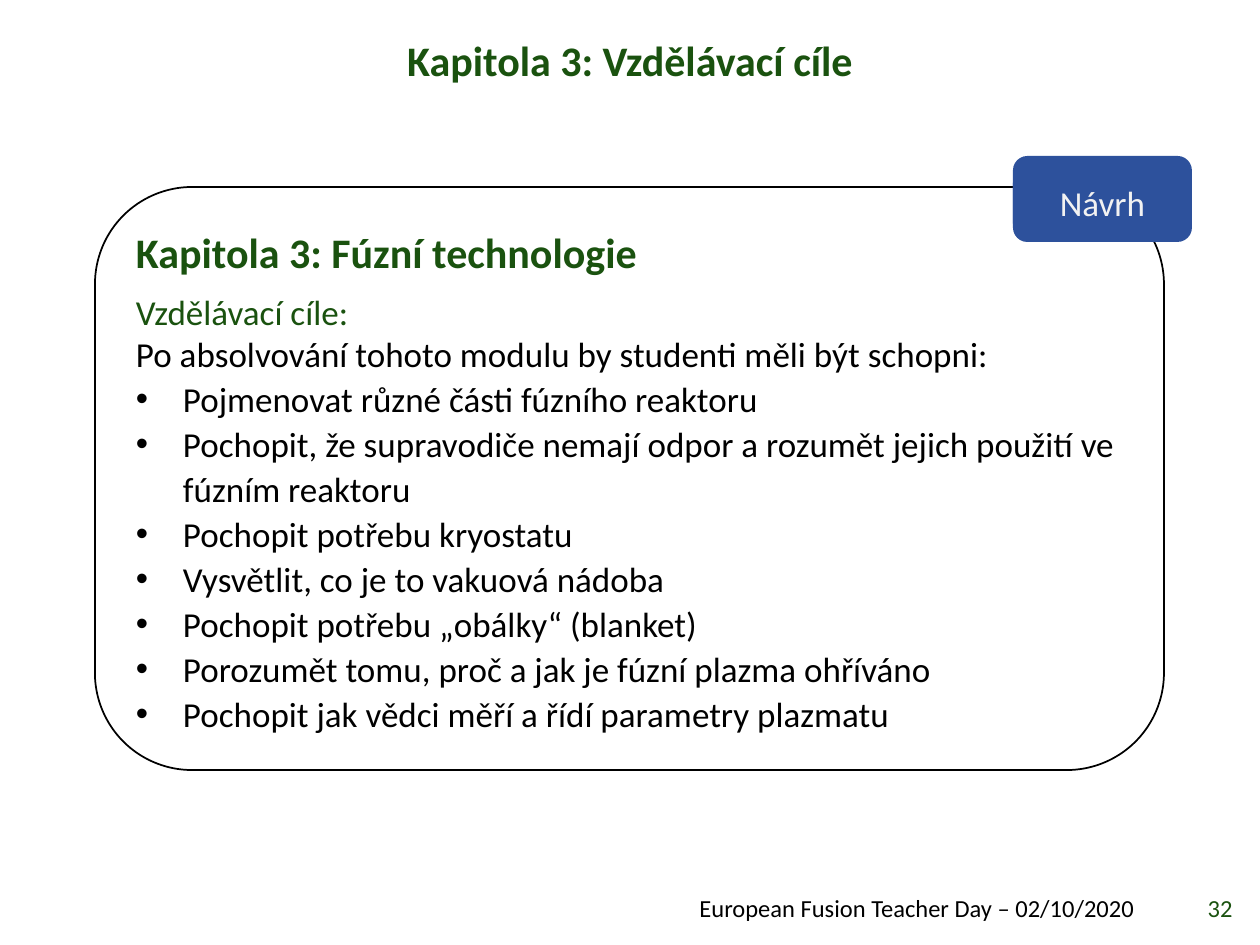
from lxml.etree import SubElement
from pptx import Presentation
from pptx.dml.color import RGBColor
from pptx.enum.shapes import MSO_SHAPE
from pptx.enum.text import MSO_ANCHOR as Anchor, MSO_AUTO_SIZE as AutoSize, PP_ALIGN as Align
from pptx.oxml.ns import qn
from pptx.util import Emu, Pt

PX_PER_INCH = 126
FONT = "Calibri"
GREEN = RGBColor(0x1A, 0x52, 0x0F)
BLUE = RGBColor(0x2D, 0x51, 0x9C)
BLACK = RGBColor(0, 0, 0)
WHITE = RGBColor(0xFF, 0xFF, 0xFF)
LIGHT = RGBColor(0xF2, 0xF2, 0xF2)

HEADING = {"size": Pt(24), "color": GREEN, "bold": True}
SUBHEADING = {"size": Pt(20), "color": GREEN}
BODY = {"size": Pt(20), "color": BLACK}
BADGE = {"size": Pt(20), "color": LIGHT}
FOOTER = {"size": Pt(14), "color": BLACK}
PAGE_NUMBER = {"size": Pt(14), "color": GREEN}

GOALS = [
    "Pojmenovat různé části fúzního reaktoru",
    "Pochopit, že supravodiče nemají odpor a rozumět jejich použití ve fúzním reaktoru",
    "Pochopit potřebu kryostatu",
    "Vysvětlit, co je to vakuová nádoba",
    "Pochopit potřebu „obálky“ (blanket)",
    "Porozumět tomu, proč a jak je fúzní plazma ohříváno",
    "Pochopit jak vědci měří a řídí parametry plazmatu",
]


def px(length):
    return Emu(round(length * 914400 / PX_PER_INCH))


def set_values(target, values):
    for name, value in values.items():
        setattr(target, name, value)


def place(shape, left, top, width, height):
    box = {"left": left, "top": top, "width": width, "height": height}
    set_values(shape, {name: px(length) for name, length in box.items()})


def set_frame(shape, anchor):
    set_values(shape.text_frame, {
        "word_wrap": True, "auto_size": AutoSize.NONE, "vertical_anchor": anchor,
    })


def write(paragraph, text, style, **spacing):
    set_values(paragraph, spacing)
    run = paragraph.add_run()
    run.text = text
    values = {"name": FONT, "bold": False, **style}
    run.font.color.rgb = values.pop("color")
    set_values(run.font, values)


def set_bullet(paragraph, indent=0):
    """Give the paragraph a hanging bullet, or none when the indent is zero."""
    properties = paragraph._p.get_or_add_pPr()
    properties.set("marL", str(px(indent)))
    properties.set("indent", str(-px(indent)))
    if not indent:
        SubElement(properties, qn("a:buNone"))
        return
    SubElement(properties, qn("a:buFont"), typeface="Arial")
    SubElement(properties, qn("a:buChar"), char="•")
    tabs = SubElement(properties, qn("a:tabLst"))
    SubElement(tabs, qn("a:tab"), pos=str(px(63)), algn="l")


def add_title(slide, text):
    title = slide.shapes.title
    place(title, 0, 33, 1260, 59)
    set_frame(title, Anchor.MIDDLE)
    write(title.text_frame.paragraphs[0], text, HEADING,
          alignment=Align.CENTER, line_spacing=0.9)


def add_goal_card(slide):
    """Shape the body placeholder as a rounded card and fill in the goals."""
    card = slide.placeholders[1]
    place(card, 95, 187, 1069, 583)
    geometry = SubElement(card._element.spPr, qn("a:prstGeom"), prst="roundRect")
    SubElement(geometry, qn("a:avLst"))
    card.fill.solid()
    card.fill.fore_color.rgb = WHITE
    card.line.color.rgb = BLACK
    card.line.width = Pt(1)
    set_frame(card, Anchor.MIDDLE)

    rows = [
        ("Kapitola 3: Fúzní technologie", HEADING, 0, 1.07, 8),
        ("Vzdělávací cíle:", SUBHEADING, 0, 1.0, 0),
        ("Po absolvování tohoto modulu by studenti měli být schopni:", BODY, 0, 1.0, 0),
    ]
    rows += [(goal, BODY, 47, 1.07, 8 if goal == GOALS[-1] else 0) for goal in GOALS]
    frame = card.text_frame
    for index, (text, style, indent, line_spacing, after) in enumerate(rows):
        paragraph = frame.add_paragraph() if index else frame.paragraphs[0]
        set_bullet(paragraph, indent)
        write(paragraph, text, style, alignment=Align.LEFT, line_spacing=line_spacing,
              space_before=Pt(0), space_after=Pt(after))


def add_badge_shape(slide, top, height):
    shape = slide.shapes.add_shape(
        MSO_SHAPE.ROUNDED_RECTANGLE, px(1013), px(top), px(179), px(height))
    shape.shadow.inherit = False
    shape.fill.solid()
    shape.fill.fore_color.rgb = BLUE
    shape.line.fill.background()
    return shape


def add_badge(slide, text):
    add_badge_shape(slide, 156, 86)
    label = add_badge_shape(slide, 173, 60)
    set_frame(label, Anchor.MIDDLE)
    write(label.text_frame.paragraphs[0], text, BADGE, alignment=Align.CENTER)


def add_footer_text(slide, text, left, width, style):
    box = slide.shapes.add_textbox(px(left), px(886), px(width), px(43))
    set_frame(box, Anchor.MIDDLE)
    write(box.text_frame.paragraphs[0], text, style, alignment=Align.RIGHT)


def main():
    presentation = Presentation()
    presentation.slide_width, presentation.slide_height = px(1260), px(945)
    slide = presentation.slides.add_slide(presentation.slide_layouts[1])
    add_title(slide, "Kapitola 3: Vzdělávací cíle")
    add_goal_card(slide)
    add_badge(slide, "Návrh")
    add_footer_text(slide, "European Fusion Teacher Day – 02/10/2020", 184, 963, FOOTER)
    add_footer_text(slide, "32", 1162, 83, PAGE_NUMBER)
    presentation.save("out.pptx")


if __name__ == "__main__":
    main()
